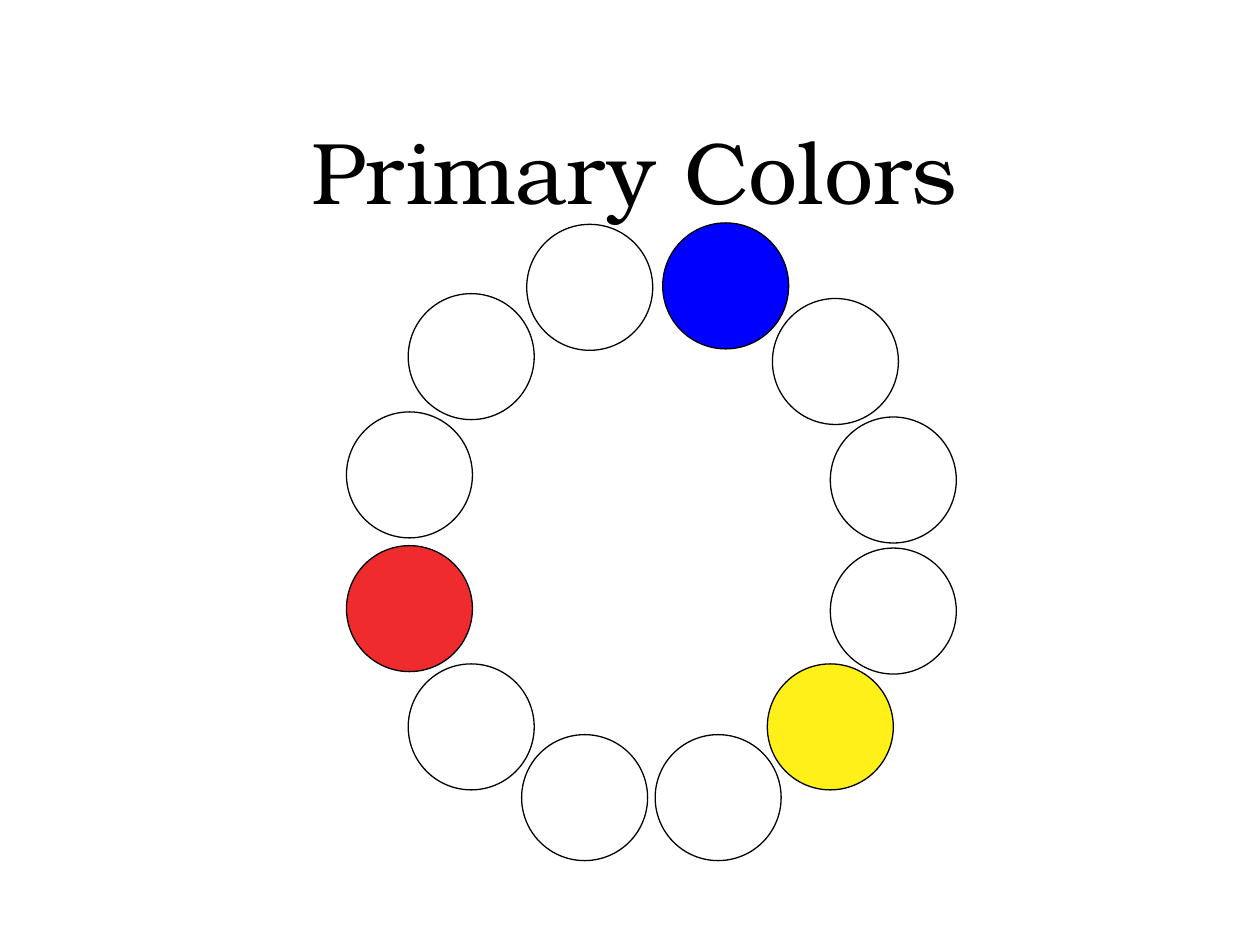
from dataclasses import dataclass
from typing import Optional

import pptx
import pptx.dml.color
import pptx.enum.shapes
import pptx.enum.text
import pptx.util

Pt = pptx.util.Pt
FONT = "TeX Gyre Bonum"
BLACK = "000000"
DIAMETER = 72


@dataclass
class Swatch:
    left: float
    top: float
    fill: Optional[str] = None


# Colour wheel, clockwise from the top; only primaries are filled
WHEEL = [
    Swatch(301, 128.2),
    Swatch(378.7, 127.4, "0000FF"),
    Swatch(441.4, 170.6),
    Swatch(474.5, 238.3),
    Swatch(474.5, 313.2),
    Swatch(438.5, 379.4, "FFF019"),
    Swatch(374.4, 419.8),
    Swatch(298.1, 419.8),
    Swatch(233.3, 379.4),
    Swatch(198, 311.8, "EF2B2D"),
    Swatch(198, 235.4),
    Swatch(233.3, 167.8),
]


def color(hex_value: str) -> pptx.dml.color.RGBColor:
    return pptx.dml.color.RGBColor.from_string(hex_value)


def add_swatch(shapes, swatch: Swatch) -> None:
    shape = shapes.add_shape(
        pptx.enum.shapes.MSO_SHAPE.OVAL,
        Pt(swatch.left), Pt(swatch.top), Pt(DIAMETER), Pt(DIAMETER),
    )
    shape.shadow.inherit = False
    if swatch.fill:
        shape.fill.solid()
        shape.fill.fore_color.rgb = color(swatch.fill)
    else:
        shape.fill.background()
    shape.line.color.rgb = color(BLACK)
    shape.line.width = Pt(0.75)


def add_title(shapes) -> None:
    text_frame = shapes.add_textbox(Pt(138.2), Pt(54), Pt(468), Pt(78.5)).text_frame
    text_frame.word_wrap = True
    text_frame.margin_left = text_frame.margin_right = Pt(2.88)
    text_frame.margin_top = text_frame.margin_bottom = Pt(2.88)
    paragraph = text_frame.paragraphs[0]
    paragraph.alignment = pptx.enum.text.PP_ALIGN.CENTER
    # The larger closing space sets the line height
    for text, size in (("Primary Colors", 50), (" ", 60)):
        run = paragraph.add_run()
        run.text = text
        run.font.name = FONT
        run.font.size = Pt(size)
        run.font.color.rgb = color(BLACK)


def main() -> None:
    presentation = pptx.Presentation()
    presentation.slide_width = Pt(720)
    presentation.slide_height = Pt(540)
    slide = presentation.slides.add_slide(presentation.slide_layouts[6])

    # Wheel and title form one group
    group = slide.shapes.add_group_shape()
    for swatch in WHEEL:
        add_swatch(group.shapes, swatch)
    add_title(group.shapes)

    presentation.save("out.pptx")


if __name__ == "__main__":
    main()
